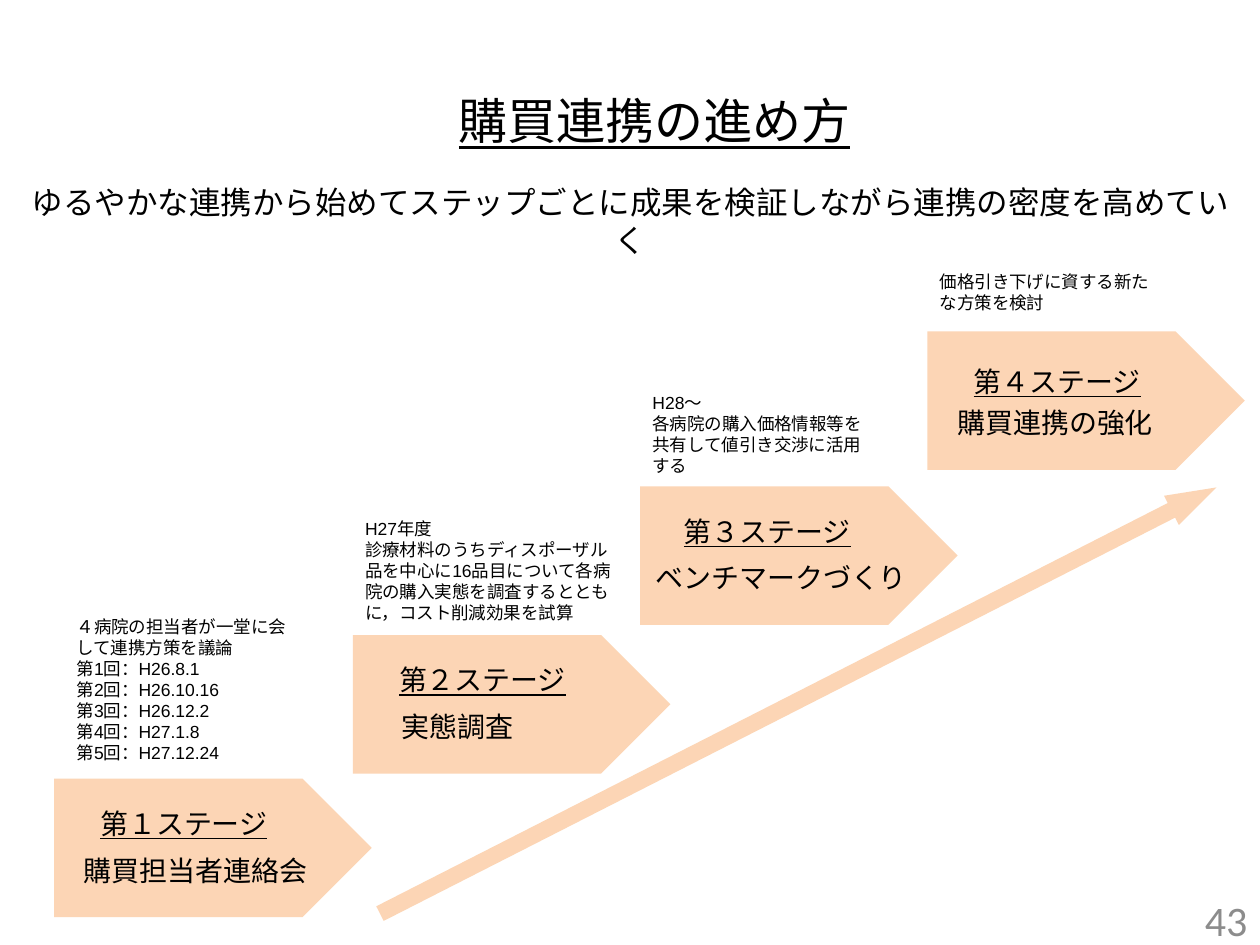
"""Build the slide that shows the four stages of joint purchasing."""
from lxml.etree import SubElement
from pptx import Presentation
from pptx.dml.color import RGBColor
from pptx.enum.shapes import MSO_SHAPE as SHAPE
from pptx.enum.text import MSO_ANCHOR as ANCHOR, MSO_AUTO_SIZE as AUTO_SIZE, PP_ALIGN as ALIGN
from pptx.oxml.ns import qn
from pptx.util import Inches, Pt

BLACK = RGBColor(0x00, 0x00, 0x00)
GRAY = RGBColor(0x8C, 0x8C, 0x8C)
PEACH = RGBColor(0xFC, 0xD5, 0xB5)


def write_text(shape, text, size, font="Calibri", color=BLACK, align=ALIGN.CENTER,
               underline=False, margins=(0.1, 0.05, 0.1, 0.05)):
    """Fill a shape with one paragraph per line of text."""
    frame = shape.text_frame
    frame.word_wrap = True
    frame.auto_size = AUTO_SIZE.NONE
    frame.vertical_anchor = ANCHOR.MIDDLE
    (frame.margin_left, frame.margin_top,
     frame.margin_right, frame.margin_bottom) = [Inches(margin) for margin in margins]
    frame.text = text
    for paragraph in frame.paragraphs:
        paragraph.alignment = align
        paragraph.space_before = Pt(0)
        for run in paragraph.runs:
            run.font.size = Pt(size)
            run.font.name = font
            run.font.color.rgb = color
            run.font.underline = underline


def add_peach_shape(kind, left, top, width, height):
    """Add a plain peach shape without outline or shadow."""
    shape = slide.shapes.add_shape(kind, Inches(left), Inches(top), Inches(width), Inches(height))
    shape.shadow.inherit = False
    shape.fill.solid()
    shape.fill.fore_color.rgb = PEACH
    shape.line.fill.background()
    return shape


presentation = Presentation()
presentation.slide_width = Inches(10)
presentation.slide_height = Inches(7.5)
slide = presentation.slides.add_slide(presentation.slide_layouts[1])

title, subtitle = slide.placeholders
for placeholder, top, height in [(title, 0.52, 0.87), (subtitle, 1.4, 0.71)]:
    placeholder.left, placeholder.top = Inches(0.12), Inches(top)
    placeholder.width, placeholder.height = Inches(9.76), Inches(height)
write_text(title, "購買連携の進め方", 28, underline=True, margins=(0.49, 0.05, 0.1, 0.05))
write_text(subtitle, "ゆるやかな連携から始めてステップごとに成果を検証しながら連携の密度を高めていく", 18)
properties = subtitle.text_frame.paragraphs[0]._p.get_or_add_pPr()
properties.set("marL", "0")
properties.set("indent", "0")
SubElement(properties, qn("a:buNone"))

arrow = add_peach_shape(SHAPE.RIGHT_ARROW, 2.61, 5.43, 7.45, 0.26)
arrow.rotation = 333
arrow.adjustments[1] = 1.54

stages = [
    ("第１ステージ", 0.43, 6.18, 0.28, 0.2, "購買担当者連絡会", ALIGN.CENTER, 0),
    ("第２ステージ", 2.8, 5.04, 0.28, 0.2, "実態調査", ALIGN.LEFT, 0.39),
    ("第３ステージ", 5.08, 3.86, 0.26, 0.2, "ベンチマークづくり", ALIGN.CENTER, 0),
    ("第４ステージ", 7.36, 2.63, 0.28, 0.24, "購買連携の強化", ALIGN.LEFT, 0.24),
]
for label, left, top, label_dx, label_dy, goal, align, indent in stages:
    pentagon = add_peach_shape(SHAPE.PENTAGON, left, top, 2.52, 1.1)
    write_text(pentagon, goal, 16, font="Noto Sans CJK JP", align=align,
               margins=(indent, 0.35, 0, 0))
    label_box = slide.shapes.add_textbox(Inches(left + label_dx), Inches(top + label_dy),
                                         Inches(1.5), Inches(0.31))
    write_text(label_box, label, 16, underline=True, margins=(0, 0, 0, 0))

notes = [
    (0.51, 4.77, 1.89, 1.41, "４病院の担当者が一堂に会して連携方策を議論\n第1回：H26.8.1\n第2回：H26.10.16\n"
                             "第3回：H26.12.2\n第4回：H27.1.8\n第5回：H27.12.24"),
    (2.8, 3.99, 2.17, 1.08, "H27年度\n診療材料のうちディスポーザル品を中心に16品目について"
                            "各病院の購入実態を調査するとともに，コスト削減効果を試算"),
    (5.08, 3.03, 1.89, 0.83, "H28～\n各病院の購入価格情報等を共有して値引き交渉に活用する"),
    (7.36, 1.93, 1.97, 0.78, "価格引き下げに資する新たな方策を検討"),
]
for left, top, width, height, text in notes:
    note = slide.shapes.add_textbox(Inches(left), Inches(top), Inches(width), Inches(height))
    write_text(note, text, 10, font="Arial", align=ALIGN.LEFT)

page_number = slide.shapes.add_textbox(Inches(7.67), Inches(7.1), Inches(2.33), Inches(0.4))
write_text(page_number, "43", 24, color=GRAY, align=ALIGN.RIGHT)

presentation.save("out.pptx")
